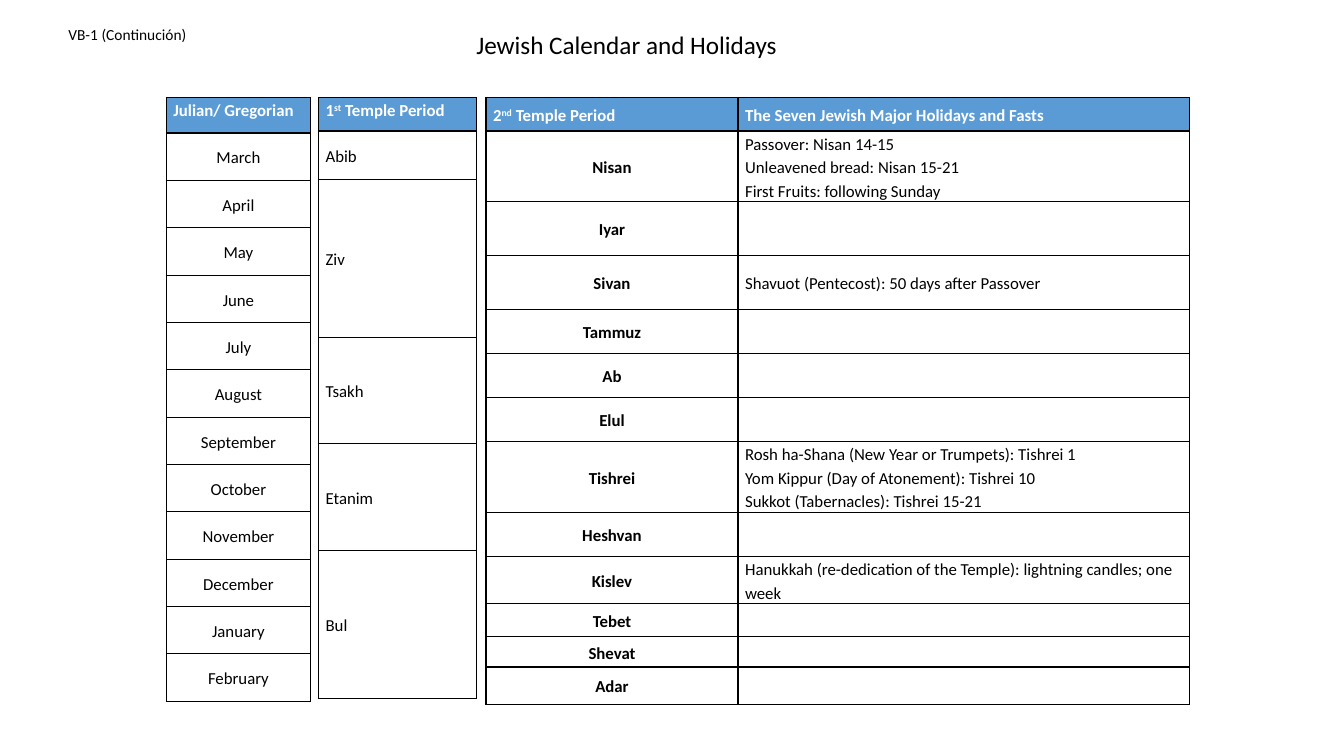
import pptx
import pptx.dml.color
import pptx.enum.text
import pptx.oxml
import pptx.oxml.ns
import pptx.util
from pptx.util import Inches

BLACK = pptx.dml.color.RGBColor(0x00, 0x00, 0x00)
WHITE = pptx.dml.color.RGBColor(0xFF, 0xFF, 0xFF)
HEADER_BLUE = pptx.dml.color.RGBColor(0x5B, 0x9B, 0xD5)
LEFT = pptx.enum.text.PP_ALIGN.LEFT
CENTER = pptx.enum.text.PP_ALIGN.CENTER
TOP = pptx.enum.text.MSO_ANCHOR.TOP
MIDDLE = pptx.enum.text.MSO_ANCHOR.MIDDLE

TABLE_TOP = 0.97
MONTHS = ["March", "April", "May", "June", "July", "August", "September",
          "October", "November", "December", "January", "February"]
FIRST_TEMPLE = [("Abib", 0.48), ("Ziv", 1.57), ("Tsakh", 1.05),
                ("Etanim", 1.06), ("Bul", 1.47)]
SECOND_TEMPLE = [
    ("Nisan", 0.7, "Passover: Nisan 14-15\nUnleavened bread: Nisan 15-21\n"
                   "First Fruits: following Sunday"),
    ("Iyar", 0.53, ""),
    ("Sivan", 0.54, "Shavuot (Pentecost): 50 days after Passover"),
    ("Tammuz", 0.44, ""),
    ("Ab", 0.43, ""),
    ("Elul", 0.44, ""),
    ("Tishrei", 0.7, "Rosh ha-Shana (New Year or Trumpets): Tishrei 1\n"
                     "Yom Kippur (Day of Atonement): Tishrei 10\n"
                     "Sukkot (Tabernacles): Tishrei 15-21"),
    ("Heshvan", 0.44, ""),
    ("Kislev", 0.46, "Hanukkah (re-dedication of the Temple): "
                     "lightning candles; one week"),
    ("Tebet", 0.33, ""),
    ("Shevat", 0.3, ""),
    ("Adar", 0.37, ""),
]


def write(frame, text, size=12, color=BLACK, bold=False, align=LEFT,
          line=None, after=0):
    """Fill a text frame: newlines part paragraphs, ^ marks enclose superscript."""
    for index, content in enumerate(text.split("\n")):
        para = frame.add_paragraph() if index else frame.paragraphs[0]
        para.alignment = align
        para.space_before = pptx.util.Pt(0)
        para.space_after = pptx.util.Pt(after)
        if line:
            para.line_spacing = line
        for place, part in enumerate(content.split("^")):
            span = para.add_run()
            span.text = part
            span.font.name = "Calibri"
            span.font.size = pptx.util.Pt(size)
            span.font.bold = bold
            span.font.color.rgb = color
            if place % 2:
                span._r.get_or_add_rPr().set("baseline", "30000")


def add_borders(cell):
    properties = cell._tc.get_or_add_tcPr()
    for index, side in enumerate(("lnL", "lnR", "lnT", "lnB")):
        properties.insert(index, pptx.oxml.parse_xml(
            f'<a:{side} {pptx.oxml.ns.nsdecls("a")} w="12700">'
            f'<a:solidFill><a:srgbClr val="{BLACK}"/></a:solidFill></a:{side}>'))


class CalendarSlide:
    def __init__(self, deck):
        self.page = deck.slides.add_slide(deck.slide_layouts[5])

    def title(self, text, left, top, width, height):
        box = self.page.shapes.title
        box.left, box.top = Inches(left), Inches(top)
        box.width, box.height = Inches(width), Inches(height)
        box.text_frame.vertical_anchor = MIDDLE
        write(box.text_frame, text, size=18, align=CENTER, line=0.9)

    def label(self, text, left, top, width, height):
        box = self.page.shapes.add_textbox(
            Inches(left), Inches(top), Inches(width), Inches(height))
        box.text_frame.word_wrap = False
        box.text_frame.auto_size = pptx.enum.text.MSO_AUTO_SIZE.SHAPE_TO_FIT_TEXT
        write(box.text_frame, text, size=11)

    def table(self, left, widths, heights, rows, header_anchor=TOP,
              centered=False, bold=False, after=0):
        """Draw rows under a blue header; centered and bold apply to column one."""
        grid = self.page.shapes.add_table(
            len(rows), len(widths), Inches(left), Inches(TABLE_TOP),
            Inches(sum(widths)), Inches(sum(heights))).table
        grid.first_row = grid.horz_banding = False
        for column, width in zip(grid.columns, widths):
            column.width = Inches(width)
        for row, height in zip(grid.rows, heights):
            row.height = Inches(height)
        for r, texts in enumerate(rows):
            for c, text in enumerate(texts):
                cell = grid.cell(r, c)
                header, lead = r == 0, c == 0
                cell.margin_left = cell.margin_right = Inches(0.07)
                cell.margin_top = cell.margin_bottom = 0
                cell.vertical_anchor = header_anchor if header else MIDDLE
                if header:
                    cell.fill.solid()
                    cell.fill.fore_color.rgb = HEADER_BLUE
                else:
                    cell.fill.background()
                add_borders(cell)
                write(cell.text_frame, text, line=1.15, after=after,
                      color=WHITE if header else BLACK,
                      bold=header or (bold and lead),
                      align=CENTER if centered and lead and not header else LEFT)


def main():
    deck = pptx.Presentation()
    deck.slide_width, deck.slide_height = Inches(13.33), Inches(7.5)
    calendar = CalendarSlide(deck)
    calendar.title("Jewish Calendar and Holidays", 2.66, 0.18, 7.11, 0.55)
    calendar.table(1.65, [1.43], [0.35] + [0.47] * len(MONTHS),
                   [["Julian/ Gregorian"]] + [[month] for month in MONTHS],
                   centered=True)
    calendar.table(3.16, [1.57], [0.33] + [height for _, height in FIRST_TEMPLE],
                   [["1^st^ Temple Period"]] + [[name] for name, _ in FIRST_TEMPLE],
                   after=10)
    calendar.table(4.82, [2.5, 4.48],
                   [0.33] + [height for _, height, _ in SECOND_TEMPLE],
                   [["2^nd^ Temple Period",
                     "The Seven Jewish Major Holidays and Fasts"]]
                   + [[name, feast] for name, _, feast in SECOND_TEMPLE],
                   header_anchor=MIDDLE, centered=True, bold=True)
    calendar.label("VB-1 (Continución)", 0.58, 0.2, 1.4, 0.29)
    deck.save("out.pptx")


if __name__ == "__main__":
    main()
